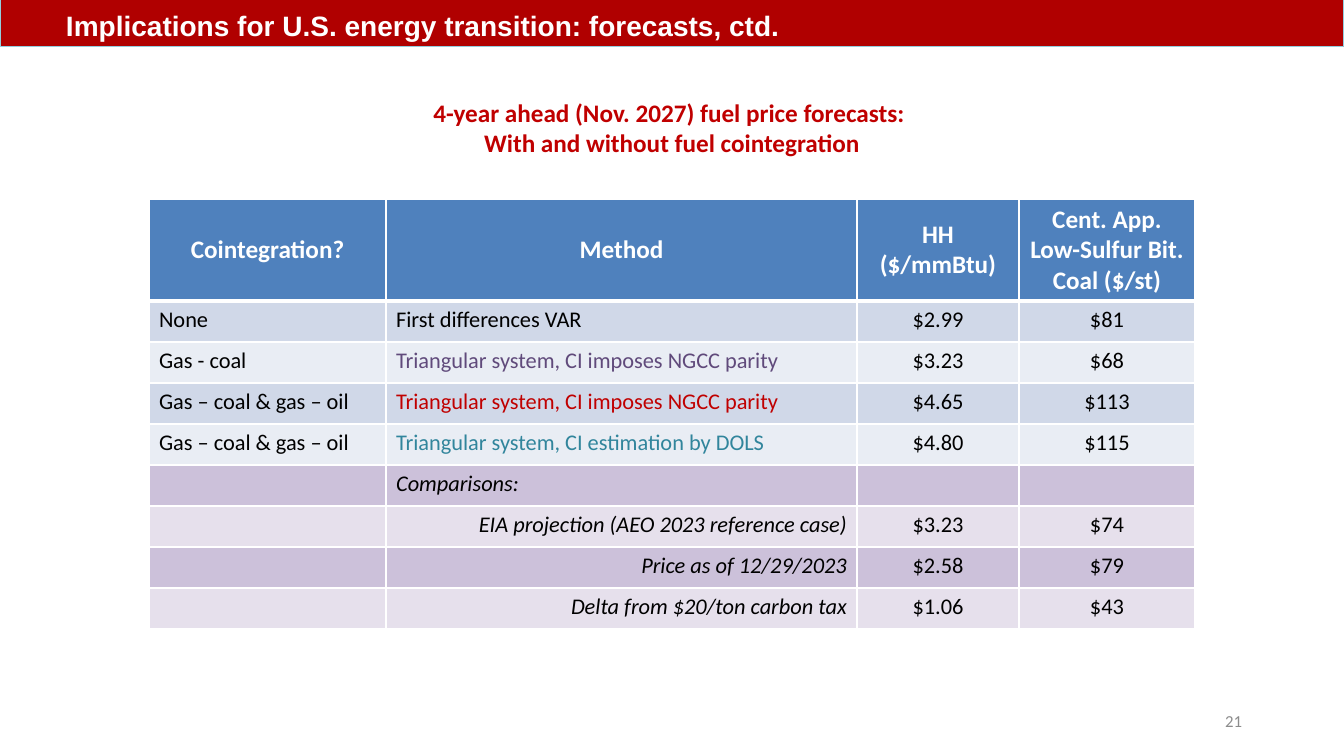
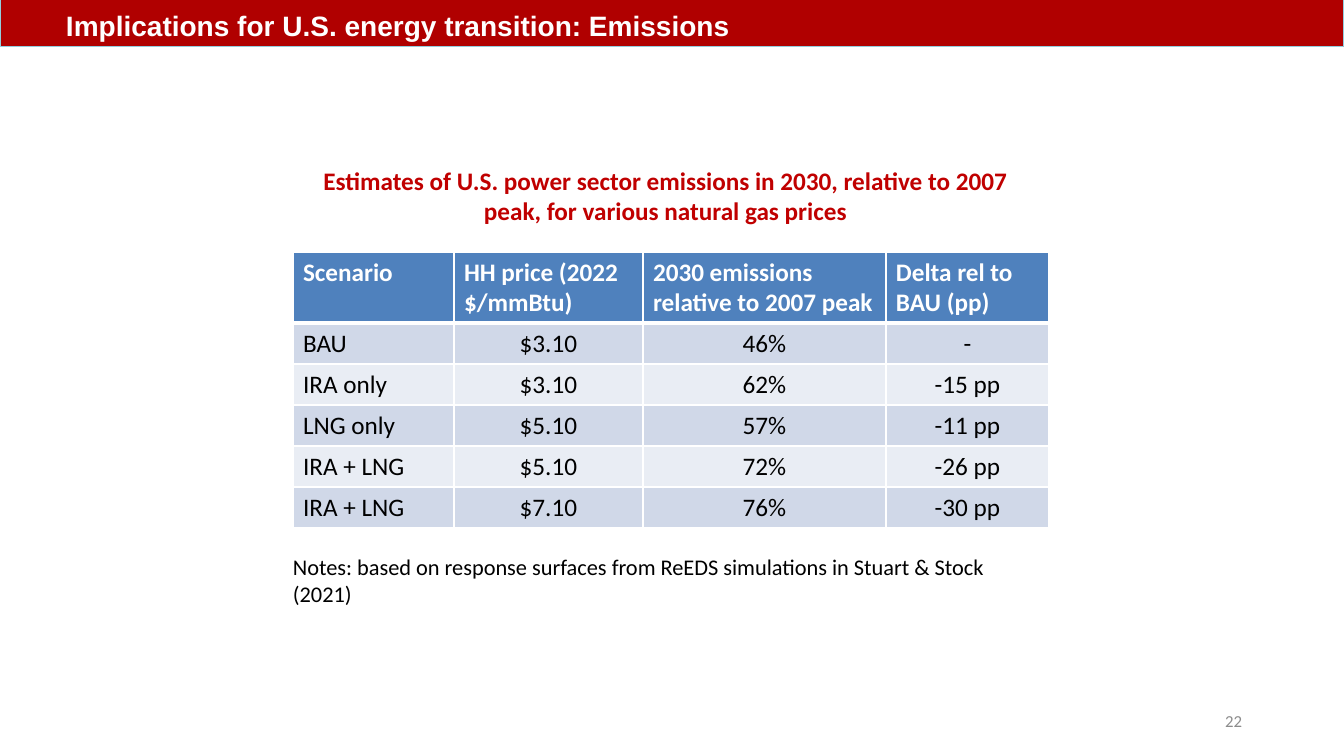
"""Build two slides of fuel price and emissions tables under a shared title band."""
import dataclasses

import lxml.etree
import pptx
import pptx.dml.color
import pptx.enum.shapes
import pptx.enum.text
import pptx.oxml.ns
import pptx.util

EMU_PER_PX = 914400 / 100.8
SLIDE_W, SLIDE_H = 1344, 756
ROW_H = 41

WHITE, BLACK, GREY = "FFFFFF", "000000", "8C8C8C"
BAND_RED, BAND_EDGE, RED = "B00000", "93CDDD", "C00000"
PURPLE, TEAL = "604A7B", "31859C"
HEADER_BLUE = "4F81BD"
BLUE_BANDS = ("D0D8E8", "E9EDF4")
PURPLE_BANDS = ("CCC1DA", "E6E0EC")

ALIGN = pptx.enum.text.PP_ALIGN
ANCHOR = pptx.enum.text.MSO_ANCHOR
LEFT, CENTER, RIGHT = ALIGN.LEFT, ALIGN.CENTER, ALIGN.RIGHT


@dataclasses.dataclass(frozen=True)
class Style:
    size: int
    color: str = BLACK
    bold: bool = False
    italic: bool = False
    align: ALIGN = LEFT
    font: str = "Calibri"


@dataclasses.dataclass(frozen=True)
class Box:
    x: int
    y: int
    w: int
    h: int


@dataclasses.dataclass(frozen=True)
class Row:
    texts: tuple[str, ...]
    changes: dict = dataclasses.field(default_factory=dict)
    bands: tuple[str, str] = BLUE_BANDS


@dataclasses.dataclass(frozen=True)
class Grid:
    x: int
    y: int
    widths: tuple[int, ...]
    header: tuple[str, ...]
    header_h: int
    header_align: ALIGN
    header_anchor: ANCHOR
    aligns: tuple[ALIGN, ...]
    body_size: int
    rows: tuple[Row, ...]


TITLE = Style(20, WHITE, bold=True, font="Arial")
CAPTION = Style(18, RED, bold=True, align=CENTER)
NUMBER = Style(12, GREY, align=RIGHT)
NOTE = Style(16)


def px(n: int) -> int:
    return round(n * EMU_PER_PX)


def rgb(color: str) -> pptx.dml.color.RGBColor:
    return pptx.dml.color.RGBColor.from_string(color)


def place(box: Box) -> tuple[int, ...]:
    return tuple(px(n) for n in dataclasses.astuple(box))


def write(tf, text: str, style: Style) -> None:
    tf.text = text
    for p in tf.paragraphs:
        p.alignment = style.align
        for r in p.runs:
            r.font.name = style.font
            r.font.size = pptx.util.Pt(style.size)
            r.font.bold = style.bold
            r.font.italic = style.italic
            r.font.color.rgb = rgb(style.color)


def add_text(s, box: Box, text: str, style: Style, anchor: ANCHOR = ANCHOR.TOP,
             wrap: bool = True) -> None:
    tf = s.shapes.add_textbox(*place(box)).text_frame
    tf.word_wrap = wrap
    tf.vertical_anchor = anchor
    write(tf, text, style)


def add_base(prs, title: str, number: int):
    s = prs.slides.add_slide(prs.slide_layouts[6])
    add_text(s, Box(950, 701, 302, 40), str(number), NUMBER, ANCHOR.MIDDLE)
    sp = s.shapes.add_shape(pptx.enum.shapes.MSO_SHAPE.RECTANGLE,
                            *place(Box(0, 0, SLIDE_W, 47)))
    sp.shadow.inherit = False
    sp.fill.solid()
    sp.fill.fore_color.rgb = rgb(BAND_RED)
    sp.line.color.rgb = rgb(BAND_EDGE)
    sp.line.width = 0
    tf = sp.text_frame
    tf.margin_left = px(66)
    tf.vertical_anchor = ANCHOR.BOTTOM
    write(tf, title, TITLE)
    return s


def add_borders(cell, top: int, bottom: int) -> None:
    tc_pr = cell._tc.get_or_add_tcPr()
    qn = pptx.oxml.ns.qn
    for side, points in (("L", 1), ("R", 1), ("T", top), ("B", bottom)):
        ln = lxml.etree.SubElement(tc_pr, qn(f"a:ln{side}"), w=str(pptx.util.Pt(points)))
        fill = lxml.etree.SubElement(ln, qn("a:solidFill"))
        lxml.etree.SubElement(fill, qn("a:srgbClr"), val=WHITE)


def fill_cell(cell, text: str, style: Style, fill: str, top: int, bottom: int) -> None:
    add_borders(cell, top, bottom)
    cell.fill.solid()
    cell.fill.fore_color.rgb = rgb(fill)
    if text:
        write(cell.text_frame, text, style)


def add_grid(s, grid: Grid) -> None:
    heights = [grid.header_h] + [ROW_H] * len(grid.rows)
    box = Box(grid.x, grid.y, sum(grid.widths), sum(heights))
    table = s.shapes.add_table(len(heights), len(grid.widths), *place(box)).table
    table.horz_banding = False
    for column, width in zip(table.columns, grid.widths):
        column.width = px(width)
    for line, height in zip(table.rows, heights):
        line.height = px(height)
    header_style = Style(18, WHITE, bold=True, align=grid.header_align)
    for j, text in enumerate(grid.header):
        cell = table.cell(0, j)
        cell.vertical_anchor = grid.header_anchor
        fill_cell(cell, text, header_style, HEADER_BLUE, 1, 3)
    for i, row in enumerate(grid.rows):
        for j, text in enumerate(row.texts):
            style = Style(grid.body_size, align=grid.aligns[j])
            if j == 1:
                style = dataclasses.replace(style, **row.changes)
            fill_cell(table.cell(i + 1, j), text, style, row.bands[i % 2],
                      1 if i else 3, 1)


def comparison(label: str, gas: str = "", coal: str = "", align: ALIGN = RIGHT) -> Row:
    return Row(("", label, gas, coal), {"italic": True, "align": align}, PURPLE_BANDS)


PARITY = "Triangular system, CI imposes NGCC parity"
ALL_FUELS = "Gas – coal & gas – oil"

FORECASTS = Grid(
    149, 199, (237, 471, 162, 176),
    ("Cointegration?", "Method", "HH ($/mmBtu)", "Cent. App. Low-Sulfur Bit. Coal ($/st)"),
    102, CENTER, ANCHOR.MIDDLE, (LEFT, LEFT, CENTER, CENTER), 16,
    (
        Row(("None", "First differences VAR", "$2.99", "$81")),
        Row(("Gas - coal", PARITY, "$3.23", "$68"), {"color": PURPLE}),
        Row((ALL_FUELS, PARITY, "$4.65", "$113"), {"color": RED}),
        Row((ALL_FUELS, "Triangular system, CI estimation by DOLS", "$4.80", "$115"),
            {"color": TEAL}),
        comparison("Comparisons:", align=LEFT),
        comparison("EIA projection (AEO 2023 reference case)", "$3.23", "$74"),
        comparison("Price as of 12/29/2023", "$2.58", "$79"),
        comparison("Delta from $20/ton carbon tax", "$1.06", "$43"),
    ),
)

EMISSIONS = Grid(
    293, 252, (161, 189, 243, 163),
    ("Scenario", "HH price (2022 $/mmBtu)", "2030 emissions relative to 2007 peak",
     "Delta rel to BAU (pp)"),
    71, LEFT, ANCHOR.TOP, (LEFT, CENTER, CENTER, CENTER), 18,
    (
        Row(("BAU", "$3.10", "46%", "-")),
        Row(("IRA only", "$3.10", "62%", "-15 pp")),
        Row(("LNG only", "$5.10", "57%", "-11 pp")),
        Row(("IRA + LNG", "$5.10", "72%", "-26 pp")),
        Row(("IRA + LNG", "$7.10", "76%", "-30 pp")),
    ),
)


def add_forecasts(prs) -> None:
    s = add_base(prs, "Implications for U.S. energy transition: forecasts, ctd.", 21)
    add_grid(s, FORECASTS)
    add_text(s, Box(421, 92, 502, 72),
             "4-year ahead (Nov. 2027) fuel price forecasts: \n"
             "With and without fuel cointegration", CAPTION, wrap=False)


def add_emissions(prs) -> None:
    s = add_base(prs, "Implications for U.S. energy transition: Emissions", 22)
    add_grid(s, EMISSIONS)
    add_text(s, Box(283, 160, 765, 72),
             "Estimates of U.S. power sector emissions in 2030, relative to 2007 peak, "
             "for various natural gas prices", CAPTION)
    add_text(s, Box(283, 548, 767, 65),
             "Notes: based on response surfaces from ReEDS simulations in "
             "Stuart & Stock (2021)", NOTE)


def main() -> None:
    prs = pptx.Presentation()
    prs.slide_width, prs.slide_height = px(SLIDE_W), px(SLIDE_H)
    add_forecasts(prs)
    add_emissions(prs)
    prs.save("out.pptx")


if __name__ == "__main__":
    main()
